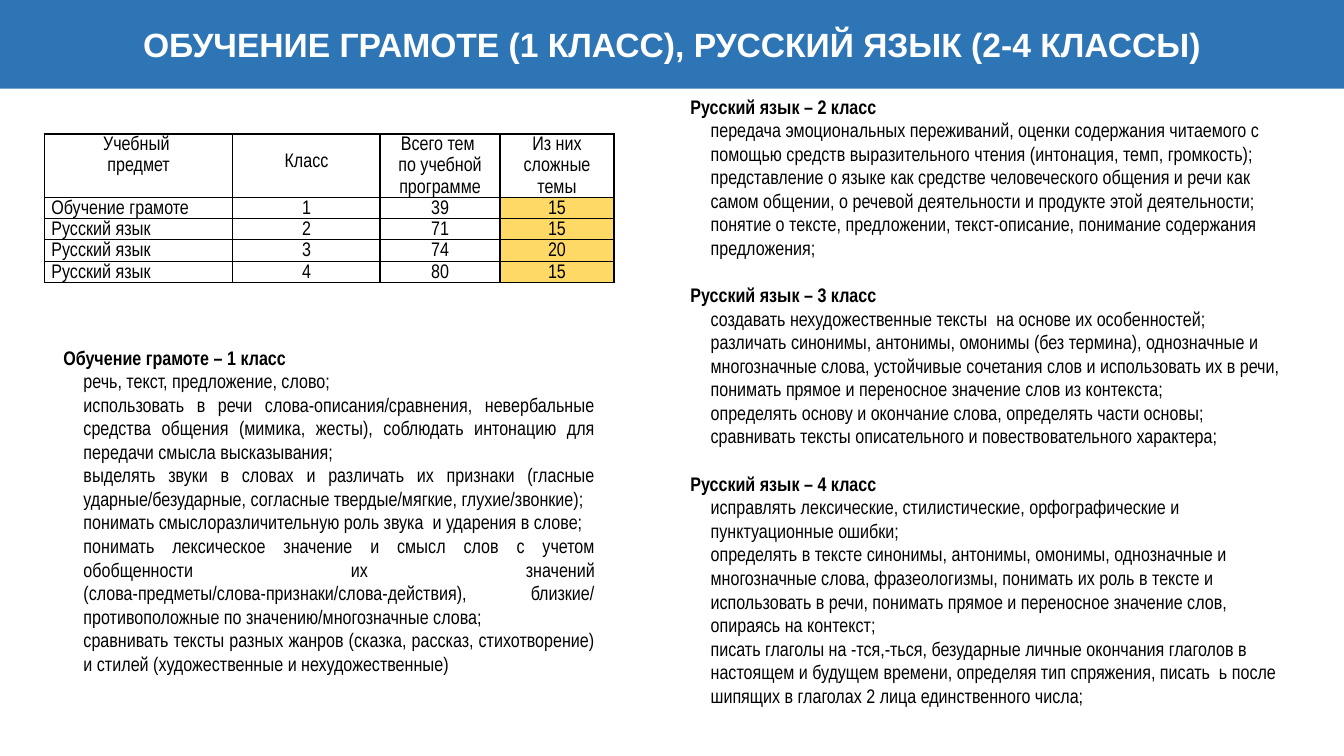
from pptx import Presentation
from pptx.util import Inches, Pt
from pptx.dml.color import RGBColor
from pptx.enum.text import PP_ALIGN as Al, MSO_ANCHOR as Anchor, MSO_AUTO_SIZE as Auto
from pptx.oxml import parse_xml
from pptx.oxml.ns import nsdecls

# Content
TITLE = "ОБУЧЕНИЕ ГРАМОТЕ (1 КЛАСС), РУССКИЙ ЯЗЫК (2-4 КЛАССЫ)"
HEAD = [
    ["Учебный ", "предмет"],
    ["Класс"],
    ["Всего тем ", "по учебной программе"],
    ["Из них", "сложные темы"],
]
ROWS = [
    ("Обучение грамоте", 1, 39, 15),
    ("Русский язык", 2, 71, 15),
    ("Русский язык", 3, 74, 20),
    ("Русский язык", 4, 80, 15),
]
LEFT = [
    ("Обучение грамоте – 1 класс", [
        "речь, текст, предложение, слово;",
        "использовать в речи слова-описания/сравнения, невербальные средства общения "
        "(мимика, жесты), соблюдать интонацию для передачи смысла высказывания;",
        "выделять звуки в словах и различать их признаки (гласные ударные/безударные, "
        "согласные твердые/мягкие, глухие/звонкие);",
        "понимать смыслоразличительную роль звука  и ударения в слове;",
        "понимать лексическое значение и смысл слов с учетом обобщенности их значений "
        "(слова-предметы/слова-признаки/слова-действия), близкие/ противоположные "
        "по значению/многозначные слова;",
        "сравнивать тексты разных жанров (сказка, рассказ, стихотворение) и стилей "
        "(художественные и нехудожественные)",
    ]),
]
RIGHT = [
    ("Русский язык – 2 класс", [
        "передача эмоциональных переживаний, оценки содержания читаемого с помощью "
        "средств выразительного чтения (интонация, темп, громкость);",
        "представление о языке как средстве человеческого общения и речи как самом "
        "общении, о речевой деятельности и продукте этой деятельности;",
        "понятие о тексте, предложении, текст-описание, понимание содержания предложения;",
    ]),
    ("Русский язык – 3 класс", [
        "создавать нехудожественные тексты  на основе их особенностей;",
        "различать синонимы, антонимы, омонимы (без термина), однозначные и многозначные "
        "слова, устойчивые сочетания слов и использовать их в речи, понимать прямое и "
        "переносное значение слов из контекста;",
        "определять основу и окончание слова, определять части основы;",
        "сравнивать тексты описательного и повествовательного характера;",
    ]),
    ("Русский язык – 4 класс", [
        "исправлять лексические, стилистические, орфографические и пунктуационные ошибки;",
        "определять в тексте синонимы, антонимы, омонимы, однозначные и многозначные "
        "слова, фразеологизмы, понимать их роль в тексте и использовать в речи, понимать "
        "прямое и переносное значение слов, опираясь на контекст;",
        "писать глаголы на -тся,-ться, безударные личные окончания глаголов в настоящем и "
        "будущем времени, определяя тип спряжения, писать  ь после шипящих в глаголах "
        "2 лица единственного числа;",
    ]),
]

# Layout and colours
COLS = [1.87, 1.46, 1.19, 1.13]
HEAD_H, ROW_H = 0.43, 0.11
BLUE, GOLD, BLACK, WHITE = "2E75B6", "FFD966", "000000", "FFFFFF"
NARROW = "Arial Narrow"


def paint(fill, color):
    fill.solid()
    fill.fore_color.rgb = RGBColor.from_string(color)


def write(para, text, size=14, font=NARROW, color=BLACK, bold=False):
    run = para.add_run()
    run.text = text
    run.font.size, run.font.name, run.font.bold = Pt(size), font, bold
    run.font.color.rgb = RGBColor.from_string(color)


def next_para(frame, first):
    return frame.paragraphs[0] if first else frame.add_paragraph()


def border(cell):
    props = cell._tc.get_or_add_tcPr()
    for i, side in enumerate(("lnL", "lnR", "lnT", "lnB")):
        props.insert(i, parse_xml(
            f'<a:{side} {nsdecls("a")} w="12700"><a:solidFill>'
            f'<a:srgbClr val="{BLACK}"/></a:solidFill></a:{side}>'))


def fill_cell(cell, lines, align, pad, space, after=0):
    cell.margin_left = cell.margin_right = Inches(pad)
    cell.margin_top = cell.margin_bottom = 0
    for i, line in enumerate(lines):
        para = next_para(cell.text_frame, i == 0)
        para.alignment, para.line_spacing = align, space
        para.space_after = Pt(after)
        write(para, line)
    cell.fill.background()
    border(cell)


def add_topics(slide, box, groups, align):
    frame = slide.shapes.add_textbox(*map(Inches, box)).text_frame
    frame.word_wrap = True
    for i, (head, items) in enumerate(groups):
        para = next_para(frame, i == 0)
        if i:
            para.space_before = Pt(17)
        write(para, head, bold=True)
        for item in items:
            para = frame.add_paragraph()
            para.alignment = align
            props = para._p.get_or_add_pPr()
            props.set("marL", str(Inches(0.2)))
            props.set("indent", "0")
            write(para, item)


def add_title(slide):
    band = slide.shapes.title
    band.left, band.top = 0, 0
    band.width, band.height = Inches(13.33), Inches(0.88)
    paint(band.fill, BLUE)
    frame = band.text_frame
    frame.auto_size, frame.vertical_anchor = Auto.NONE, Anchor.MIDDLE
    para = frame.paragraphs[0]
    para.alignment, para.line_spacing = Al.CENTER, 1.0
    write(para, TITLE, 24, "Arial", WHITE, True)


def add_grid(slide):
    high = HEAD_H + ROW_H * len(ROWS)
    grid = slide.shapes.add_table(
        len(ROWS) + 1, len(COLS), Inches(0.44), Inches(1.33),
        Inches(sum(COLS)), Inches(high)).table
    grid.first_row = grid.horz_banding = False
    for col, wide in zip(grid.columns, COLS):
        col.width = Inches(wide)
    for r, row in enumerate(grid.rows):
        row.height = Inches(ROW_H if r else HEAD_H)
    for c, lines in enumerate(HEAD):
        fill_cell(grid.cell(0, c), lines, Al.CENTER, 0.04, 1.14)
    grid.cell(0, 1).margin_top = Inches(0.16)
    for r, row in enumerate(ROWS, 1):
        for c, value in enumerate(row):
            align = Al.CENTER if c else Al.LEFT
            fill_cell(grid.cell(r, c), [str(value)], align, 0.07, 1.15, 10)
        paint(grid.cell(r, len(COLS) - 1).fill, GOLD)


def main():
    deck = Presentation()
    deck.slide_width, deck.slide_height = Inches(13.33), Inches(7.5)
    slide = deck.slides.add_slide(deck.slide_layouts[5])
    add_title(slide)
    add_grid(slide)
    add_topics(slide, (0.53, 3.38, 5.47, 3.4), LEFT, Al.JUSTIFY)
    add_topics(slide, (6.75, 0.89, 6.16, 6.23), RIGHT, Al.LEFT)
    deck.save("out.pptx")


if __name__ == "__main__":
    main()
